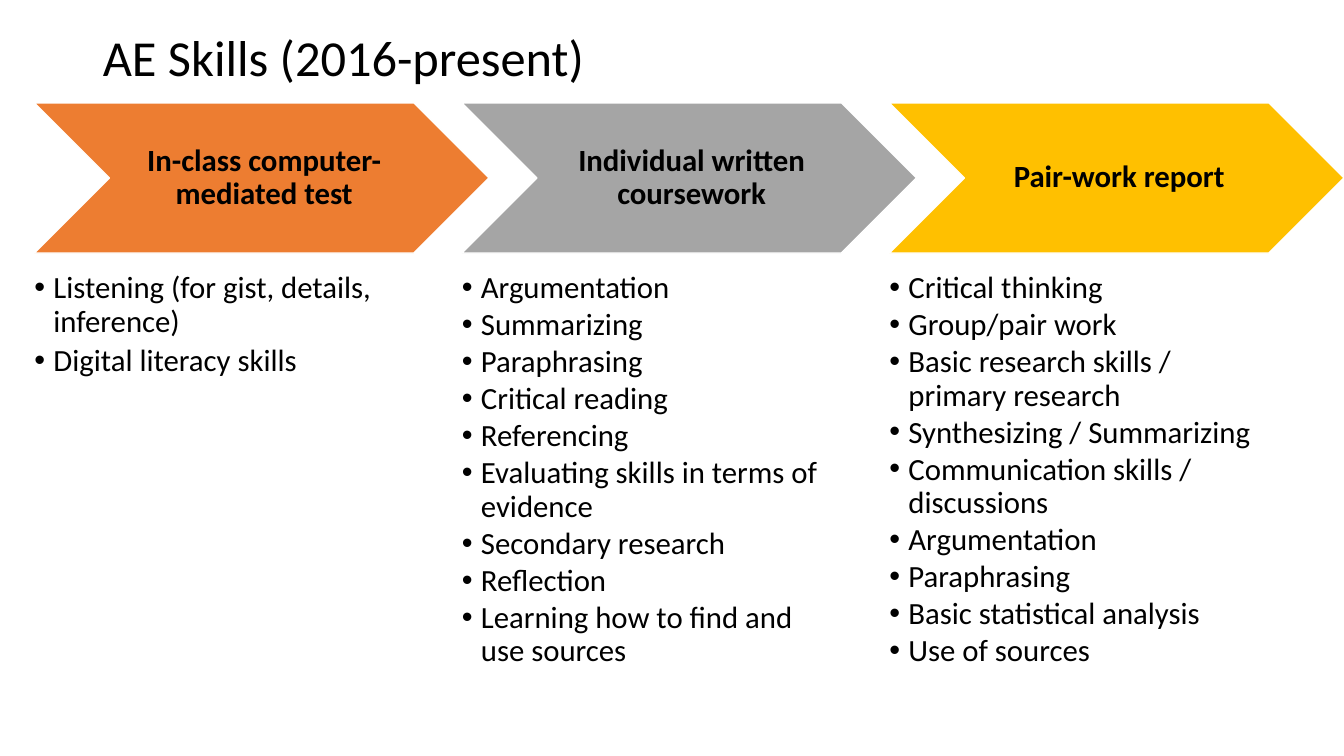
from pptx import Presentation
from pptx.dml.color import RGBColor as RGB
from pptx.enum.shapes import MSO_SHAPE as Shape
from pptx.enum.text import MSO_ANCHOR as Anchor, MSO_AUTO_SIZE as Auto, PP_ALIGN as Align
from pptx.util import Pt
from lxml.etree import SubElement
from pptx.oxml.ns import qn

PX = 9144  # EMU per px, 100 px to the inch
THEME = {
    "font": "Calibri", "text": "000000", "line": "FFFFFF",
    "title": 36, "body": 22,
}

# Heading, chevron fill, gap between items in points, items
STAGES = [
    ("In-class computer-mediated test", "ED7D31", 4.7, [
        "Listening (for gist, details, inference)",
        "Digital literacy skills"]),
    ("Individual written coursework", "A5A5A5", 2.7, [
        "Argumentation", "Summarizing", "Paraphrasing", "Critical reading",
        "Referencing", "Evaluating skills in terms of evidence",
        "Secondary research", "Reflection",
        "Learning how to find and use sources"]),
    ("Pair-work report", "FFC000", 2.7, [
        "Critical thinking", "Group/pair work",
        "Basic research skills / primary research",
        "Synthesizing / Summarizing", "Communication skills / discussions",
        "Argumentation", "Paraphrasing", "Basic statistical analysis",
        "Use of sources"]),
]
LEFT, STEP = 34, 424


def place(box, x, y, w, h):
    box.left, box.top, box.width, box.height = (n * PX for n in (x, y, w, h))


def style(para, size, align, bold=False, gap=0):
    para.alignment = align
    para.line_spacing = 0.9
    para.space_before = Pt(gap)
    font = para.font
    font.name, font.size, font.bold = THEME["font"], Pt(size), bold
    font.color.rgb = RGB.from_string(THEME["text"])


deck = Presentation()
deck.slide_width, deck.slide_height = 1333 * PX, 750 * PX
slide = deck.slides.add_slide(deck.slide_layouts.get_by_name("Comparison"))
title, *lists, spare = slide.placeholders
spare.element.getparent().remove(spare.element)

# Title
place(title, 92, 25, 1150, 70)
frame = title.text_frame
frame.text = "AE Skills (2016-present)"
frame.vertical_anchor = Anchor.MIDDLE
frame.auto_size = Auto.NONE
style(frame.paragraphs[0], THEME["title"], Align.LEFT)

for col, (body, (head, fill, gap, items)) in enumerate(zip(lists, STAGES)):
    x = LEFT + col * STEP

    # Chevron with its heading
    arrow = slide.shapes.add_shape(
        Shape.CHEVRON, x * PX, 102 * PX, 451 * PX, 149 * PX)
    arrow.shadow.inherit = False
    arrow.fill.solid()
    arrow.fill.fore_color.rgb = RGB.from_string(fill)
    arrow.line.color.rgb = RGB.from_string(THEME["line"])
    arrow.line.width = Pt(1)
    frame = arrow.text_frame
    frame.text = head
    frame.word_wrap = True
    frame.vertical_anchor = Anchor.MIDDLE
    frame.margin_left = 8 * PX
    frame.margin_right = frame.margin_top = frame.margin_bottom = 3 * PX
    style(frame.paragraphs[0], THEME["body"], Align.CENTER, bold=True)

    # Skills list
    place(body, x, 270, 361, 480)
    frame = body.text_frame
    frame.text = "\n".join(items)
    frame.word_wrap = True
    frame.auto_size = Auto.NONE
    frame.vertical_anchor = Anchor.TOP
    frame.margin_left = frame.margin_right = 0
    frame.margin_top = frame.margin_bottom = 0
    for row, para in enumerate(frame.paragraphs):
        props = para._p.get_or_add_pPr()
        props.set("marL", str(19 * PX))
        props.set("indent", str(-22 * PX))
        SubElement(props, qn("a:buFont"), typeface="Arial")
        SubElement(props, qn("a:buChar"), char="•")
        style(para, THEME["body"], Align.LEFT, gap=gap if row else 0)

deck.save("out.pptx")
